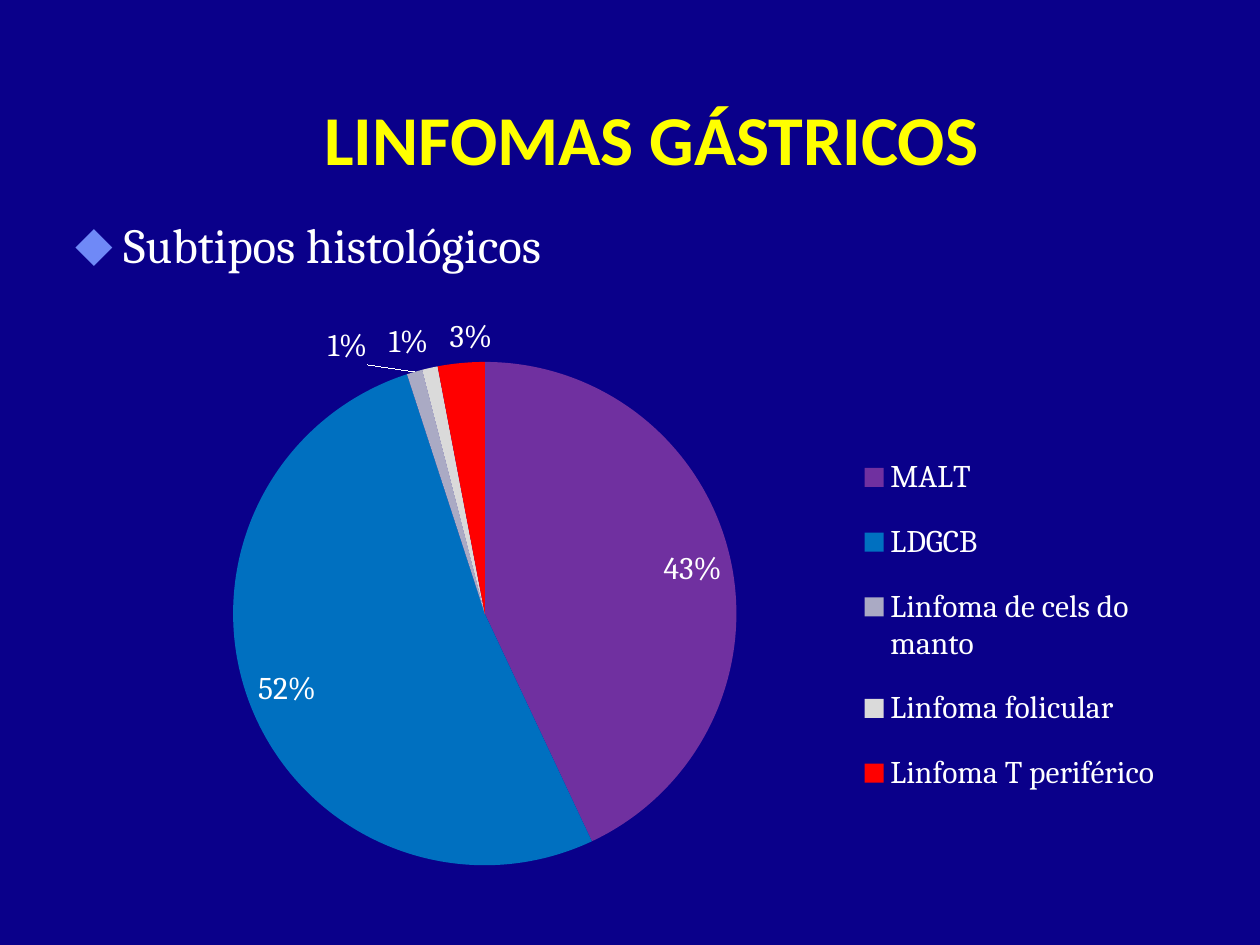
from lxml import etree
from pptx import Presentation
from pptx.chart.data import CategoryChartData
from pptx.dml.color import RGBColor
from pptx.enum.chart import XL_CHART_TYPE, XL_LABEL_POSITION, XL_LEGEND_POSITION
from pptx.enum.text import MSO_ANCHOR, PP_ALIGN
from pptx.oxml.ns import qn
from pptx.util import Inches, Pt

PIE = XL_CHART_TYPE.PIE
BEST_FIT = XL_LABEL_POSITION.BEST_FIT
LEGEND_RIGHT = XL_LEGEND_POSITION.RIGHT
MIDDLE = MSO_ANCHOR.MIDDLE
TOP = MSO_ANCHOR.TOP
CENTER = PP_ALIGN.CENTER
LEFT = PP_ALIGN.LEFT

NAVY = RGBColor(0x0A, 0x00, 0x8A)
YELLOW = RGBColor(0xFF, 0xFF, 0x00)
WHITE = RGBColor(0xFF, 0xFF, 0xFF)
BULLET_BLUE = RGBColor(0x6F, 0x89, 0xF7)
PURPLE = RGBColor(0x70, 0x30, 0xA0)
BLUE = RGBColor(0x00, 0x70, 0xC0)
LILAC = RGBColor(0xAA, 0xAA, 0xC4)
SILVER = RGBColor(0xDA, 0xDA, 0xDA)
RED = RGBColor(0xFF, 0x00, 0x00)

SUBTYPES = [
    ("MALT ", 0.43, PURPLE),
    ("LDGCB", 0.52, BLUE),
    ("Linfoma de cels do manto", 0.01, LILAC),
    ("Linfoma folicular", 0.01, SILVER),
    ("Linfoma T periférico", 0.03, RED),
]


def place(shape, left, top, width, height):
    shape.left, shape.top = Inches(left), Inches(top)
    shape.width, shape.height = Inches(width), Inches(height)


def style_font(font, name, size, color, bold=False):
    font.name = name
    font.size = Pt(size)
    font.color.rgb = color
    font.bold = bold


def fill_placeholder(placeholder, text, anchor, alignment):
    frame = placeholder.text_frame
    frame.text = text
    frame.word_wrap = True
    frame.vertical_anchor = anchor
    paragraph = frame.paragraphs[0]
    paragraph.alignment = alignment
    return paragraph


def add_diamond_bullet(paragraph):
    properties = paragraph._p.get_or_add_pPr()
    indent = Inches(0.38)
    properties.set("marL", str(indent))
    properties.set("indent", str(-indent))
    color = etree.SubElement(properties, qn("a:buClr"))
    etree.SubElement(color, qn("a:srgbClr"), val=str(BULLET_BLUE))
    etree.SubElement(properties, qn("a:buSzPct"), val="110000")
    etree.SubElement(properties, qn("a:buChar"), char="⬥")


def set_layout(parent, position, x, y, w, h, inner=False):
    for old_layout in parent.findall(qn("c:layout")):
        parent.remove(old_layout)
    layout = etree.Element(qn("c:layout"))
    manual = etree.SubElement(layout, qn("c:manualLayout"))
    if inner:
        etree.SubElement(manual, qn("c:layoutTarget"), val="inner")
    for mode in ("xMode", "yMode"):
        etree.SubElement(manual, qn(f"c:{mode}"), val="edge")
    for tag, share in zip("xywh", (x, y, w, h)):
        etree.SubElement(manual, qn(f"c:{tag}"), val=str(share))
    parent.insert(position, layout)


def add_subtype_pie(slide):
    data = CategoryChartData(number_format="0%")
    data.categories = [name for name, _, _ in SUBTYPES]
    data.add_series("Series 1", [share for _, share, _ in SUBTYPES])
    chart = slide.shapes.add_chart(
        PIE, Inches(0.83), Inches(2.41), Inches(8.5), Inches(4.6), data
    ).chart
    chart.has_title = False
    style_font(chart.font, "Cambria", 18, WHITE)

    chart.has_legend = True
    legend = chart.legend
    legend.position = LEGEND_RIGHT
    legend.include_in_layout = False
    style_font(legend.font, "Cambria", 18, WHITE)

    plot = chart.plots[0]
    plot.vary_by_categories = True
    for index, (_, _, color) in enumerate(SUBTYPES):
        wedge = plot.series[0].points[index].format
        wedge.fill.solid()
        wedge.fill.fore_color.rgb = color
        wedge.line.fill.background()

    plot.has_data_labels = True
    labels = plot.data_labels
    labels.show_value = True
    labels.show_percentage = False
    labels.number_format = "0%"
    labels.number_format_is_linked = False
    labels.position = BEST_FIT
    style_font(labels.font, "Cambria", 18, WHITE)

    plot_area = chart._chartSpace.chart.plotArea
    set_layout(plot_area, 0, 0.12, 0.1, 0.47, 0.87, inner=True)
    set_layout(legend._element, 1, 0.7, 0.22, 0.29, 0.67)


def main():
    presentation = Presentation()
    presentation.slide_width = Inches(10)
    presentation.slide_height = Inches(7.5)
    slide = presentation.slides.add_slide(presentation.slide_layouts[1])
    slide.background.fill.solid()
    slide.background.fill.fore_color.rgb = NAVY

    title = slide.shapes.title
    place(title, 0.67, 0.47, 9, 1.25)
    heading = fill_placeholder(title, "LINFOMAS GÁSTRICOS", MIDDLE, CENTER)
    style_font(heading.runs[0].font, "Calibri", 40, YELLOW, bold=True)

    body = slide.placeholders[1]
    place(body, 0.5, 1.65, 9, 5.39)
    topic = fill_placeholder(body, "Subtipos histológicos", TOP, LEFT)
    add_diamond_bullet(topic)
    style_font(topic.runs[0].font, "Cambria", 28, WHITE)

    add_subtype_pie(slide)
    presentation.save("out.pptx")


if __name__ == "__main__":
    main()
